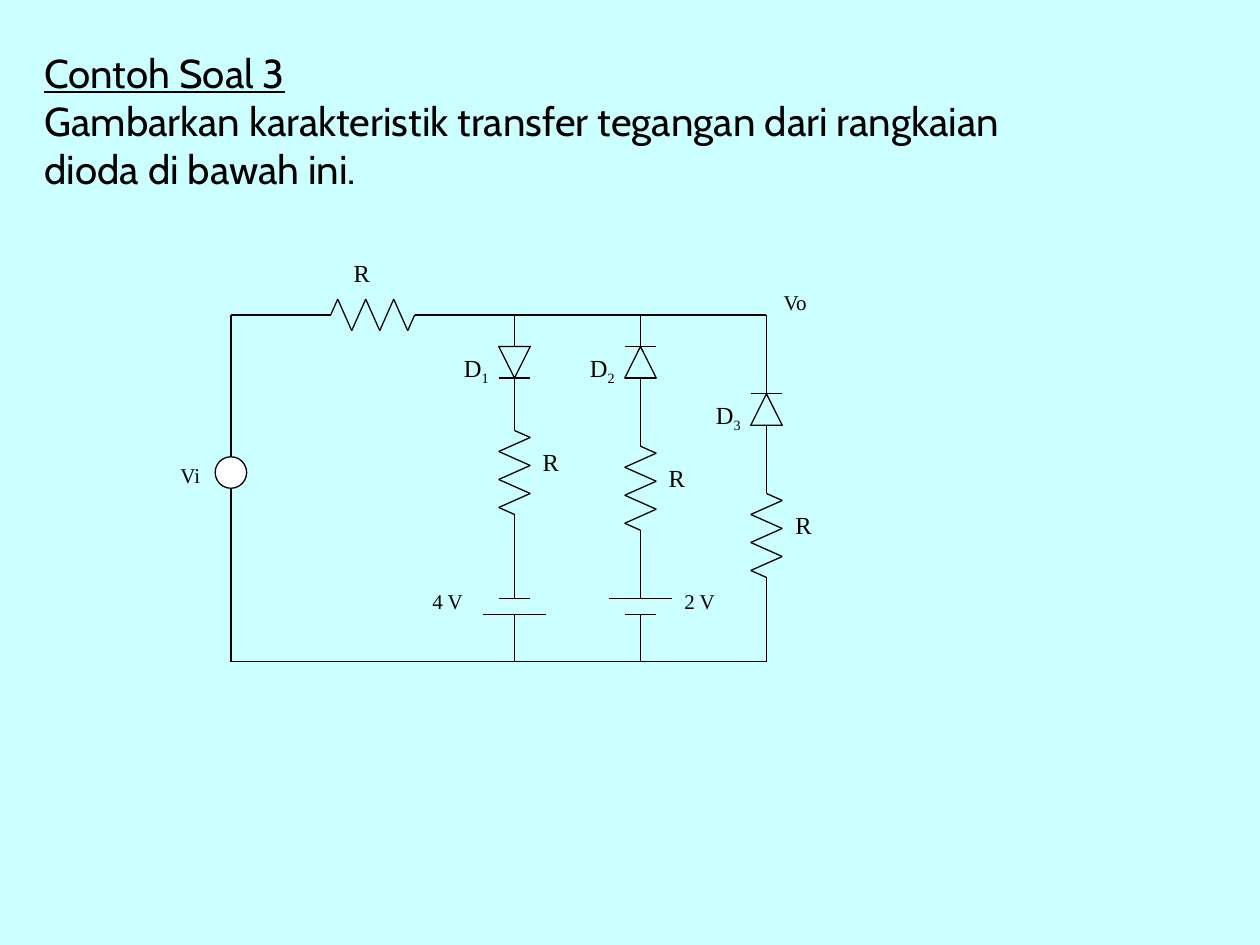
from lxml import etree
from pptx import Presentation
from pptx.dml.color import RGBColor
from pptx.enum.shapes import MSO_CONNECTOR, MSO_SHAPE
from pptx.enum.text import MSO_ANCHOR
from pptx.oxml.ns import qn
from pptx.util import Pt

STRAIGHT = MSO_CONNECTOR.STRAIGHT
TRIANGLE, OVAL = MSO_SHAPE.ISOSCELES_TRIANGLE, MSO_SHAPE.OVAL
BOTTOM = MSO_ANCHOR.BOTTOM
COLORS = {"background": "CCFFFF", "ink": "000000", "source": "FFFFFF"}
COLORS = {name: RGBColor.from_string(value) for name, value in COLORS.items()}

prs = Presentation()
prs.slide_width, prs.slide_height = Pt(720), Pt(540)
s = prs.slides.add_slide(prs.slide_layouts[6])
s.background.fill.solid()
s.background.fill.fore_color.rgb = COLORS["background"]


def add_line(x1, y1, x2, y2):
    line = s.shapes.add_connector(STRAIGHT, Pt(x1), Pt(y1), Pt(x2), Pt(y2))
    line.line.color.rgb = COLORS["ink"]
    line.line.width = Pt(0.75)
    etree.SubElement(line._element.spPr, qn("a:effectLst"))


def add_text(x, y, w, h, size, font, text):
    """Add a text box and return its text frame."""
    tf = s.shapes.add_textbox(Pt(x), Pt(y), Pt(w), Pt(h)).text_frame
    tf.word_wrap = True
    p = tf.paragraphs[0]
    p.font.size, p.font.name = Pt(size), font
    p.font.color.rgb = COLORS["ink"]
    p.add_run().text = text
    return tf


# Title
tf = add_text(18.25, 23.7, 613, 90, 23, "Cabin", "Contoh Soal 3")
tf.vertical_anchor = BOTTOM
p = tf.paragraphs[0]
p.runs[0].font.underline = True
p.add_line_break()
p.add_run().text = ("Gambarkan karakteristik transfer tegangan "
                    "dari rangkaian dioda di bawah ini.")

# Circuit grid
TOP, BASE = 179.95, 378
X_SOURCE, X_D1, X_D2, X_D3 = 131.95, 294, 366, 438
HALF = 9  # half the width of a diode, resistor or source
R_LENGTH, LEAD = 48, 12
R_SERIES = 189
BATTERY_TOP, BATTERY_BOTTOM = 342, 351
SOURCE_TOP = 261

# Branches: x, diode top, diode points down, resistor top, battery half
# widths, wires
branches = [
    (X_D1, 198, True, 246, (9, 18),
     [(TOP, 198), (216, 234), (225, 243), (306, 315), (315, BATTERY_TOP),
      (BATTERY_BOTTOM, BASE)]),
    (X_D2, 198, False, 255, (18, 9),
     [(TOP, 198), (216, 234), (234, 252), (315, 324), (315, BATTERY_TOP),
      (BATTERY_BOTTOM, BASE)]),
    (X_D3, 225, False, 282, (),
     [(TOP, 216), (207, 225), (243, 261), (261, 279), (342, 351),
      (351, BASE)]),
]

# Outer loop
add_line(X_SOURCE, TOP, 186, TOP)
add_line(R_SERIES + R_LENGTH + LEAD, TOP, X_D3, TOP)
add_line(X_SOURCE, BASE, X_D3, BASE)
for y1, y2 in [(TOP, 234), (234, SOURCE_TOP), (279, 306), (306, BASE)]:
    add_line(X_SOURCE, y1, X_SOURCE, y2)

# Voltage source and diodes
symbols = [(OVAL, X_SOURCE, SOURCE_TOP, False)]
symbols += [(TRIANGLE, x, y, down) for x, y, down, *_ in branches]
for kind, x, y, down in symbols:
    sp = s.shapes.add_shape(kind, Pt(x - HALF), Pt(y), Pt(2 * HALF), Pt(2 * HALF))
    sp.shadow.inherit = False
    sp.line.color.rgb = COLORS["ink"]
    sp.line.width = Pt(0.75)
    if kind == OVAL:
        sp.fill.solid()
        sp.fill.fore_color.rgb = COLORS["source"]
    else:
        sp.fill.background()
        sp.rotation = 180 if down else 0

# Branch wires, diode bars and battery plates
for x, diode, down, _, plates, wires in branches:
    for y1, y2 in wires:
        add_line(x, y1, x, y2)
    bars = [(diode + 2 * HALF, HALF)]
    if not down:
        bars.append((diode, HALF))
    bars += zip((BATTERY_TOP, BATTERY_BOTTOM), plates)
    for y, half in bars:
        add_line(x - half, y, x + half, y)

# Resistors with leads: offsets along the wire and across it
zigzag = [(-LEAD, 0), (0, 0)]
zigzag += [(4 + 8 * i, HALF if i % 2 == 0 else -HALF) for i in range(6)]
zigzag += [(R_LENGTH, 0), (R_LENGTH + LEAD, 0)]
outlines = [[(R_SERIES + along, TOP - across) for along, across in zigzag]]
for x, _, _, resistor, *_ in branches:
    outlines.append([(x + across, resistor + along) for along, across in zigzag])
for outline in outlines:
    for start, end in zip(outline, outline[1:]):
        add_line(*start, *end)

# Labels: x, y, width, height, size, text, subscript
labels = [
    (195, 144, 45, 27, 14, "R", ""),
    (303, 252, 45, 27, 14, "R", ""),
    (375, 261, 36, 27, 14, "R", ""),
    (447.5, 288, 36, 36, 14, "R", ""),
    (258, 198, 36, 27, 14, "D", "1"),
    (330, 198, 36, 27, 14, "D", "2"),
    (402, 225, 36, 27, 14, "D", "3"),
    (96, 261, 27, 27, 12, "Vi", ""),
    (440.75, 162, 36, 36, 12, "Vo", ""),
    (240, 333, 36, 27, 12, "4 V", ""),
    (384, 333, 36, 27, 12, "2 V", ""),
]
for x, y, w, h, size, text, subscript in labels:
    tf = add_text(x, y, w, h, size, "Times New Roman", text)
    if subscript:
        r = tf.paragraphs[0].add_run()
        r.text = subscript
        r.font._element.set("baseline", "-25000")

prs.save("out.pptx")
